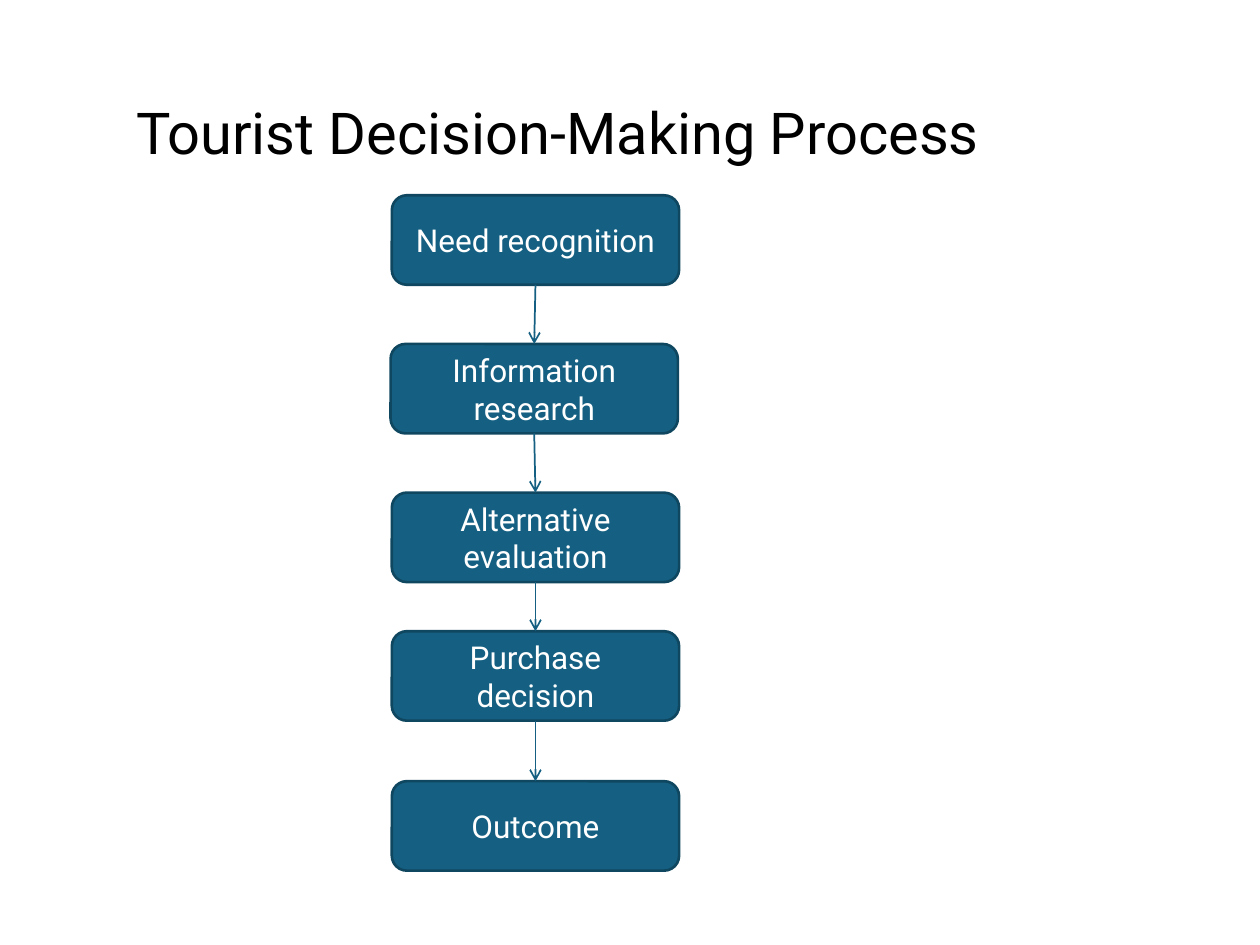
from itertools import pairwise

from lxml import etree
from pptx import Presentation
from pptx.dml.color import RGBColor
from pptx.enum.shapes import MSO_CONNECTOR, MSO_SHAPE
from pptx.enum.text import MSO_ANCHOR, PP_ALIGN
from pptx.oxml.ns import qn
from pptx.util import Inches, Pt

ROUNDED = MSO_SHAPE.ROUNDED_RECTANGLE
STRAIGHT = MSO_CONNECTOR.STRAIGHT
MIDDLE = MSO_ANCHOR.MIDDLE
LEFT, CENTER = PP_ALIGN.LEFT, PP_ALIGN.CENTER

BLACK = RGBColor(0x00, 0x00, 0x00)
WHITE = RGBColor(0xFF, 0xFF, 0xFF)
BLUE = RGBColor(0x15, 0x60, 0x82)
DARK_BLUE = RGBColor(0x10, 0x47, 0x60)

TITLE = "Tourist Decision-Making Process"
TITLE_AREA = (0.98, 0.36, 8.11, 1.43)
STEPS = [
    ("Need recognition", 3.11, 1.55),
    ("Information research", 3.1, 2.73),
    ("Alternative evaluation", 3.11, 3.91),
    ("Purchase decision", 3.11, 5.01),
    ("Outcome", 3.11, 6.2),
]
STEP_WIDTH, STEP_HEIGHT = 2.28, 0.71
BOTTOM_SITE, TOP_SITE = 2, 0

TITLE_FONT = {"name": "Roboto", "size": Pt(33), "bold": False}
STEP_FONT = {"name": "Roboto", "size": Pt(18)}


def write(shape, text, font, color, align, spacing):
    frame = shape.text_frame
    frame.word_wrap = True
    frame.vertical_anchor = MIDDLE
    para = frame.paragraphs[0]
    para.alignment = align
    para.line_spacing = spacing
    span = para.add_run()
    span.text = text
    for name, value in font.items():
        setattr(span.font, name, value)
    span.font.color.rgb = color


def draw_line(line, color, width):
    line.color.rgb = color
    line.width = Pt(width)


def add_step(page, text, left, top):
    step = page.shapes.add_shape(
        ROUNDED, *map(Inches, (left, top, STEP_WIDTH, STEP_HEIGHT))
    )
    step.shadow.inherit = False
    step.fill.solid()
    step.fill.fore_color.rgb = BLUE
    draw_line(step.line, DARK_BLUE, 1.5)
    write(step, text, STEP_FONT, WHITE, CENTER, 1.0)
    return step


def add_arrow(page, start, end):
    arrow = page.shapes.add_connector(STRAIGHT, 0, 0, 0, 0)
    arrow.begin_connect(start, BOTTOM_SITE)
    arrow.end_connect(end, TOP_SITE)
    draw_line(arrow.line, BLUE, 1)
    properties = arrow.element.spPr
    outline = properties.find(qn("a:ln"))
    etree.SubElement(outline, qn("a:tailEnd"), type="arrow")
    etree.SubElement(properties, qn("a:effectLst"))


def main():
    deck = Presentation()
    deck.slide_width, deck.slide_height = Inches(10), Inches(7.5)
    page = deck.slides.add_slide(deck.slide_layouts[5])

    title = page.shapes.title
    title.left, title.top, title.width, title.height = map(Inches, TITLE_AREA)
    write(title, TITLE, TITLE_FONT, BLACK, LEFT, 0.9)

    steps = [add_step(page, *step) for step in STEPS]
    for start, end in pairwise(steps):
        add_arrow(page, start, end)

    deck.save("out.pptx")


if __name__ == "__main__":
    main()
